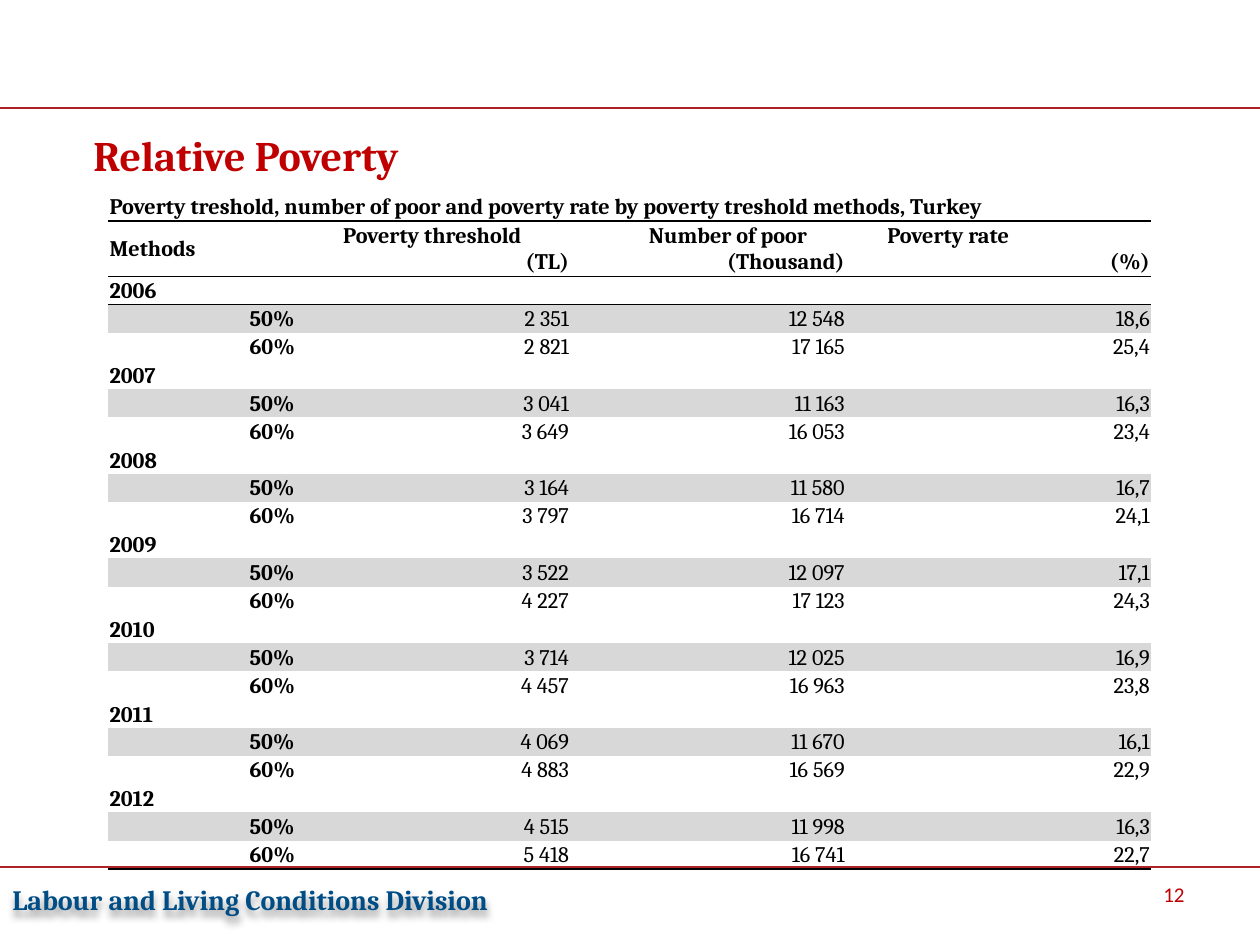
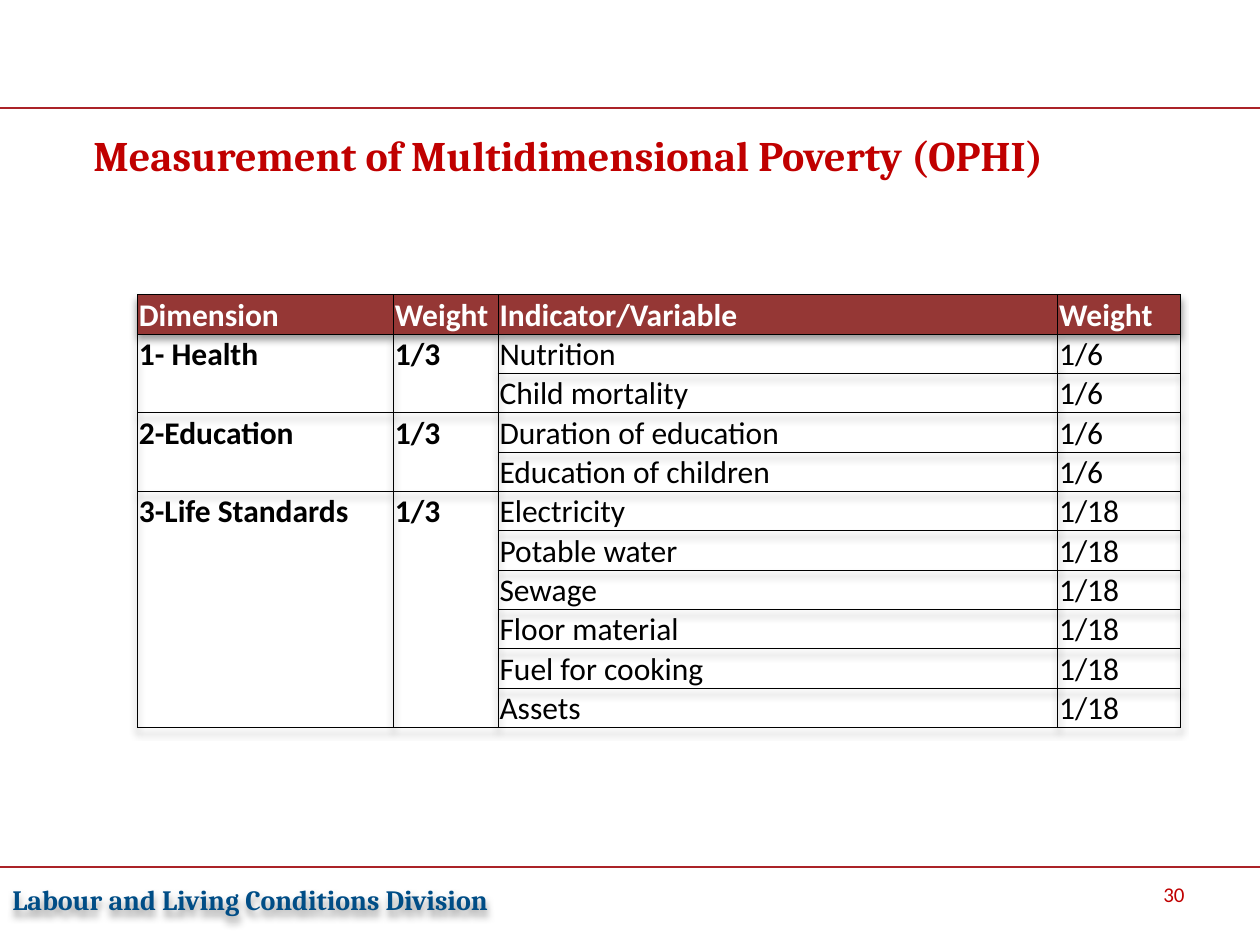
import pptx
import pptx.util
import pptx.dml.color
import pptx.enum.shapes
import pptx.enum.text
import pptx.oxml.ns
import lxml.etree

Cm = pptx.util.Cm
Pt = pptx.util.Pt
Align = pptx.enum.text.PP_ALIGN
Anchor = pptx.enum.text.MSO_ANCHOR
PLAIN = "{2D5ABB26-0587-4C30-8999-92F81FD0307C}"


def tint(code):
    return pptx.dml.color.RGBColor.from_string(code)


def node(base, tag, **attrs):
    item = lxml.etree.SubElement(base, pptx.oxml.ns.qn(tag))
    for key, value in attrs.items():
        item.set(key, str(value))
    return item


def shade(effects):
    glow = node(effects, "a:outerShdw", blurRad=Pt(4), dist=Pt(3), dir=5400000,
                algn="t", rotWithShape=0)
    node(node(glow, "a:srgbClr", val="000000"), "a:alpha", val=40000)


class Deck:
    red, line, blue = "C00000", "AB2328", "004D86"
    black, white, gray, brick = "000000", "FFFFFF", "D8D8D8", "953735"
    serif, sans = "Cambria", "Calibri"

    def __init__(self):
        self.show = pptx.Presentation()
        self.show.slide_width, self.show.slide_height = Cm(25.4), Cm(19.05)
        self.slide = None

    def style(self, par, size, font, color, bold=False):
        for run in par.runs:
            run.font.size, run.font.name = Pt(size), font
            run.font.bold, run.font.color.rgb = bold, tint(color)
        if not par.runs:
            node(par._p, "a:endParaRPr", sz=round(size * 100))

    def page(self, title, number, height):
        self.slide = self.show.slides.add_slide(self.show.slide_layouts[5])
        for top in (2.18, 17.48):
            self.rule(top)
        self.title(title, height)
        foot = self.text("Labour and Living Conditions Division", 0, 17.65, 21.8, 0.94,
                         16, self.serif, self.blue, True)
        foot.text_frame.vertical_anchor = Anchor.MIDDLE
        foot.shadow.inherit = False
        shade(foot._element.spPr.find(pptx.oxml.ns.qn("a:effectLst")))
        mark = self.text(str(number), 18.21, 17.65, 5.92, 1.02, 12, self.sans, self.red)
        mark.text_frame.paragraphs[0].alignment = Align.RIGHT

    def title(self, words, height):
        box = self.slide.shapes.title
        box.left, box.top, box.width, box.height = Cm(1.63), Cm(2.59), Cm(22.48), Cm(height)
        frame = box.text_frame
        frame.text = words
        frame.auto_size = pptx.enum.text.MSO_AUTO_SIZE.NONE
        frame.vertical_anchor = Anchor.TOP
        par = frame.paragraphs[0]
        par.alignment, par.line_spacing = Align.LEFT, 0.9
        self.style(par, 24, self.serif, self.red, True)

    def rule(self, top):
        line = self.slide.shapes.add_connector(
            pptx.enum.shapes.MSO_CONNECTOR.STRAIGHT, 0, Cm(top), Cm(25.4), Cm(top))
        line.line.color.rgb, line.line.width = tint(self.line), Pt(1.5)
        node(line._element.spPr, "a:effectLst")

    def text(self, words, left, top, width, height, size, font, color, bold=False):
        box = self.slide.shapes.add_textbox(Cm(left), Cm(top), Cm(width), Cm(height))
        box.text_frame.word_wrap = True
        box.text_frame.text = words
        self.style(box.text_frame.paragraphs[0], size, font, color, bold)
        return box

    def table(self, left, top, widths, heights):
        frame = self.slide.shapes.add_table(
            len(heights), len(widths), Cm(left), Cm(top), Cm(sum(widths)), Cm(sum(heights)))
        grid = frame.table
        grid.first_row = grid.horz_banding = False
        grid._tbl.tblPr.find(pptx.oxml.ns.qn("a:tableStyleId")).text = PLAIN
        for col, width in zip(grid.columns, widths):
            col.width = Cm(width)
        for row, height in zip(grid.rows, heights):
            row.height = Cm(height)
        return grid

    def cell(self, cell, words, size, font, color=black, bold=False, fill=None,
             edges=None, align=Align.LEFT, anchor=Anchor.MIDDLE):
        cell.margin_left = cell.margin_right = cell.margin_top = Cm(0.03)
        cell.margin_bottom = 0
        cell.vertical_anchor = anchor
        cell.text_frame.text = words
        for par in cell.text_frame.paragraphs:
            par.alignment = align
            self.style(par, size, font, color, bold)
        for side in "LRTB":
            width = (edges or {}).get(side)
            if width:
                edge = node(cell._tc.get_or_add_tcPr(), "a:ln" + side, w=Pt(width))
                node(node(edge, "a:solidFill"), "a:srgbClr", val=self.black)
        if fill:
            cell.fill.solid()
            cell.fill.fore_color.rgb = tint(fill)
        else:
            cell.fill.background()


def rates(deck):
    years = {
        "2006": (("2 351", "12 548", "18,6"), ("2 821", "17 165", "25,4")),
        "2007": (("3 041", "11 163", "16,3"), ("3 649", "16 053", "23,4")),
        "2008": (("3 164", "11 580", "16,7"), ("3 797", "16 714", "24,1")),
        "2009": (("3 522", "12 097", "17,1"), ("4 227", "17 123", "24,3")),
        "2010": (("3 714", "12 025", "16,9"), ("4 457", "16 963", "23,8")),
        "2011": (("4 069", "11 670", "16,1"), ("4 883", "16 569", "22,9")),
        "2012": (("4 515", "11 998", "16,3"), ("5 418", "16 741", "22,7")),
    }
    rows = [
        ("Poverty treshold, number of poor and poverty rate by poverty treshold methods, Turkey",
         "", "", "", ""),
        ("Methods", "", "Poverty threshold\n(TL)", "Number of poor\n(Thousand)",
         "Poverty rate\n(%)"),
    ]
    for year, (half, most) in years.items():
        rows += [(year, "", "", "", ""), ("", "50%", *half), ("", "60%", *most)]
    edges = {0: {"B": 1}, 1: {"T": 1, "B": 0.5}, 2: {"T": 0.5}, len(rows) - 1: {"B": 1}}

    deck.page("Relative Poverty", 12, 1.17)
    grid = deck.table(2.18, 3.89, (2.82, 1.14, 5.36, 5.56, 6.15),
                      [0.56, 1.1] + [0.56] * (len(rows) - 2))
    grid.cell(0, 0).merge(grid.cell(0, 4))
    grid.cell(1, 0).merge(grid.cell(1, 1))
    for r, row in enumerate(rows):
        for c, words in enumerate(row):
            deck.cell(grid.cell(r, c), words, 12.7, deck.serif, bold=r < 2 or c < 2,
                      fill=deck.gray if row[1] == "50%" else None, edges=edges.get(r),
                      align=Align.RIGHT if c > 1 else Align.LEFT,
                      anchor=Anchor.BOTTOM if row[0] in years else Anchor.MIDDLE)
    for c, indent in ((2, 0.75), (3, 1.55), (4, 0.8)):
        par = grid.cell(1, c).text_frame.paragraphs[0]
        par.alignment = Align.LEFT
        par._p.get_or_add_pPr().set("marL", str(Cm(indent)))


def weights(deck):
    groups = (
        ("1- Health", "1/6", ("Nutrition", "Child mortality")),
        ("2-Education", "1/6", ("Duration of education", "Education of children")),
        ("3-Life Standards", "1/18", ("Electricity", "Potable water", "Sewage",
                                      "Floor material", "Fuel for cooking", "Assets")),
    )
    rows = [("Dimension", "Weight", "Indicator/Variable", "Weight")]
    spans = []
    for name, weight, items in groups:
        spans.append((len(rows), len(rows) + len(items) - 1))
        for i, item in enumerate(items):
            rows.append((*(("", "") if i else (name, "1/3")), item, weight))

    deck.page("Measurement of Multidimensional Poverty (OPHI)", 30, 2.31)
    grid = deck.table(2.77, 5.94, (5.16, 2.11, 11.28, 2.48), [0.79] * len(rows))
    effects = node(grid._tbl.tblPr, "a:effectLst")
    grid._tbl.tblPr.insert(0, effects)
    shade(effects)
    for first, last in spans:
        for c in (0, 1):
            grid.cell(first, c).merge(grid.cell(last, c))
    for r, row in enumerate(rows):
        for c, words in enumerate(row):
            head = r == 0
            deck.cell(grid.cell(r, c), words, 18, deck.sans,
                      color=deck.white if head else deck.black, bold=head or c < 2,
                      fill=deck.brick if head else None, edges=dict.fromkeys("LRTB", 0.5),
                      anchor=Anchor.BOTTOM if head or c > 1 else Anchor.TOP)


def main():
    deck = Deck()
    rates(deck)
    weights(deck)
    deck.show.save("out.pptx")


if __name__ == "__main__":
    main()
